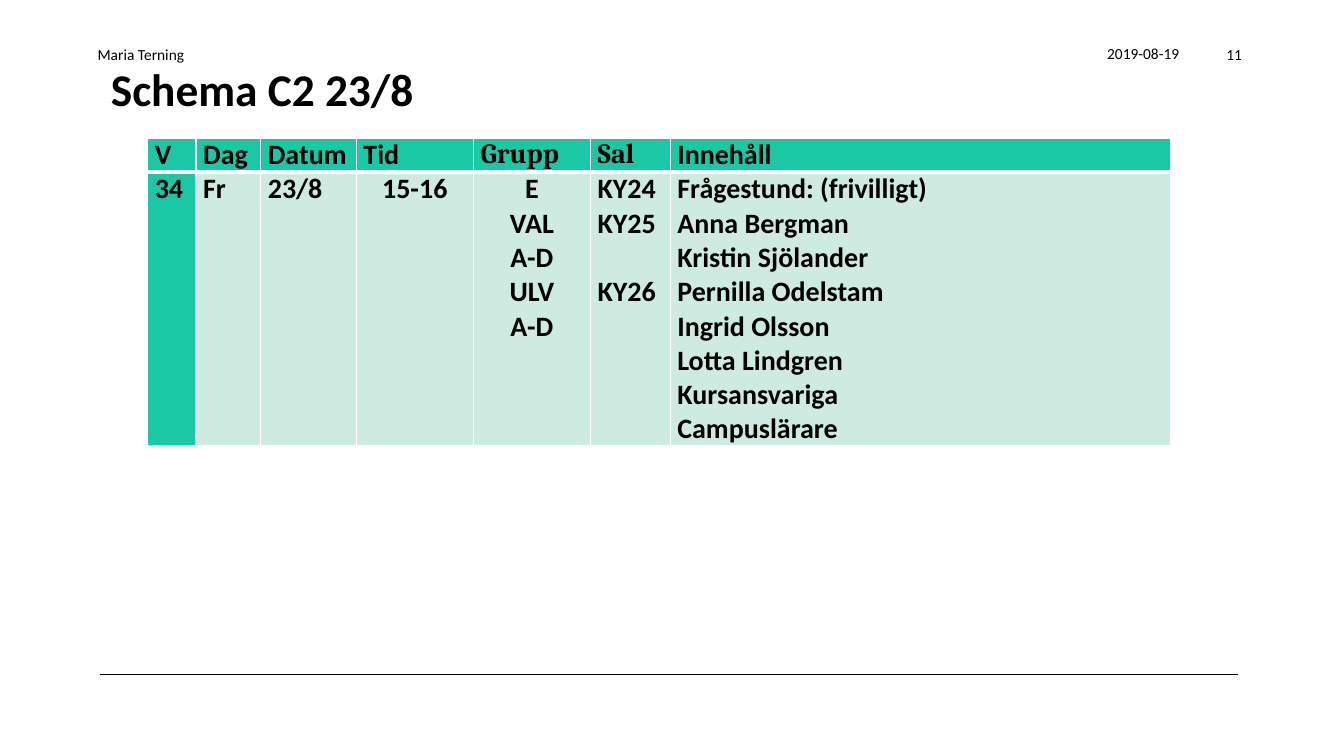
from dataclasses import dataclass
from typing import Any

from lxml import etree
from pptx import Presentation
from pptx.dml.color import RGBColor
from pptx.enum.shapes import MSO_CONNECTOR
from pptx.enum.text import MSO_ANCHOR, MSO_AUTO_SIZE, PP_ALIGN
from pptx.oxml.ns import qn
from pptx.util import Cm, Pt

LEFT, CENTER, RIGHT = PP_ALIGN.LEFT, PP_ALIGN.CENTER, PP_ALIGN.RIGHT
TOP, MIDDLE, BOTTOM = MSO_ANCHOR.TOP, MSO_ANCHOR.MIDDLE, MSO_ANCHOR.BOTTOM
STRAIGHT = MSO_CONNECTOR.STRAIGHT
NO_AUTOFIT = MSO_AUTO_SIZE.NONE
TITLE_ONLY_LAYOUT = 5


@dataclass(frozen=True)
class Theme:
    text: str = "000000"
    border: str = "FFFFFF"
    accent: str = "1BC8A6"
    pale: str = "CDEBE1"
    body_font: str = "Calibri"
    accent_font: str = "Cambria"
    title_size: float = 32.4
    table_size: float = 20
    small_size: float = 11
    table_line: float = 24.4
    thin: float = 1
    thick: float = 3
    rule: float = 0.75


@dataclass(frozen=True)
class Label:
    text: str
    left: float
    top: float
    width: float
    alignment: PP_ALIGN
    anchor: MSO_ANCHOR


@dataclass(frozen=True)
class Column:
    """gap_before is the index of an entry that has one empty line above it."""
    heading: str
    width: float
    entries: tuple[str, ...]
    alignment: PP_ALIGN = LEFT
    heading_font: str = "Calibri"
    fill: str = "CDEBE1"
    gap_before: int | None = None


THEME = Theme()
LABEL_HEIGHT = 0.74
ROW_HEIGHTS = (0.86, 6.9)
LABELS = (
    Label("2019-08-19", 24.66, 0.99, 5.31, RIGHT, TOP),
    Label("11", 29.49, 1, 2.06, RIGHT, TOP),
    Label("Maria Terning", 2.21, 0.99, 21.62, LEFT, BOTTOM),
)
COLUMNS = (
    Column("V", 1.22, ("34",), fill=THEME.accent),
    Column("Dag", 1.63, ("Fr",)),
    Column("Datum", 2.41, ("23/8",)),
    Column("Tid", 2.95, ("15-16",), CENTER),
    Column("Grupp", 2.95, ("E", "VAL", "A-D", "ULV", "A-D"), CENTER, THEME.accent_font),
    Column("Sal", 2.01, ("KY24", "KY25", "KY26"),
           heading_font=THEME.accent_font, gap_before=2),
    Column("Innehåll", 12.62, (
        "Frågestund: (frivilligt)", "Anna Bergman", "Kristin Sjölander",
        "Pernilla Odelstam", "Ingrid Olsson", "Lotta Lindgren",
        "Kursansvariga", "Campuslärare")),
)


def apply_format(target: Any, values: dict[str, Any]) -> None:
    for name, value in values.items():
        setattr(target, name, value)


def write_paragraph(paragraph: Any, text: str, size: float, bold: bool = False,
                    alignment: PP_ALIGN = LEFT, font: str = THEME.body_font) -> None:
    paragraph.alignment = alignment
    run = paragraph.add_run()
    run.text = text
    apply_format(run.font, {"name": font, "size": Pt(size), "bold": bold})
    run.font.color.rgb = RGBColor.from_string(THEME.text)


def add_title(slide: Any, text: str) -> None:
    title = slide.shapes.title
    apply_format(title, {"left": Cm(2.54), "top": Cm(1.37),
                         "width": Cm(28.65), "height": Cm(1.73)})
    apply_format(title.text_frame, {"vertical_anchor": MIDDLE, "word_wrap": True,
                                    "auto_size": NO_AUTOFIT})
    write_paragraph(title.text_frame.paragraphs[0], text, THEME.title_size, bold=True)


def add_label(slide: Any, label: Label) -> None:
    box = slide.shapes.add_textbox(Cm(label.left), Cm(label.top),
                                   Cm(label.width), Cm(LABEL_HEIGHT))
    apply_format(box.text_frame, {"word_wrap": True, "vertical_anchor": label.anchor})
    write_paragraph(box.text_frame.paragraphs[0], label.text, THEME.small_size,
                    alignment=label.alignment)


def add_rule(slide: Any) -> None:
    rule = slide.shapes.add_connector(STRAIGHT, Cm(2.52), Cm(17), Cm(31.2), Cm(17))
    rule.line.width = Pt(THEME.rule)
    rule.line.color.rgb = RGBColor.from_string(THEME.text)
    etree.SubElement(rule._element.spPr, qn("a:effectLst"))


def set_borders(cell: Any, top: float, bottom: float) -> None:
    properties = cell._tc.get_or_add_tcPr()
    widths = {"lnL": THEME.thin, "lnR": THEME.thin, "lnT": top, "lnB": bottom}
    for position, (side, width) in enumerate(widths.items()):
        line = etree.Element(qn(f"a:{side}"), w=str(Pt(width)))
        fill = etree.SubElement(line, qn("a:solidFill"))
        etree.SubElement(fill, qn("a:srgbClr"), val=THEME.border)
        properties.insert(position, line)


def format_cell(cell: Any, fill: str, top: float, bottom: float) -> None:
    apply_format(cell, {"margin_left": Cm(0.18), "margin_right": Cm(0.18),
                        "margin_top": 0, "margin_bottom": 0, "vertical_anchor": TOP})
    cell.fill.solid()
    cell.fill.fore_color.rgb = RGBColor.from_string(fill)
    set_borders(cell, top, bottom)


def fill_column(table: Any, index: int, column: Column) -> None:
    table.columns[index].width = Cm(column.width)
    heading, body = table.cell(0, index), table.cell(1, index)
    format_cell(heading, THEME.accent, THEME.thin, THEME.thick)
    format_cell(body, column.fill, THEME.thick, THEME.thin)
    write_paragraph(heading.text_frame.paragraphs[0], column.heading,
                    THEME.table_size, bold=True, font=column.heading_font)
    for number, entry in enumerate(column.entries):
        frame = body.text_frame
        paragraph = frame.add_paragraph() if number else frame.paragraphs[0]
        if number == column.gap_before:
            paragraph.space_before = Pt(THEME.table_line)
        write_paragraph(paragraph, entry, THEME.table_size, bold=True,
                        alignment=column.alignment)


def add_schedule(slide: Any) -> None:
    width = sum(column.width for column in COLUMNS)
    frame = slide.shapes.add_table(len(ROW_HEIGHTS), len(COLUMNS), Cm(3.72), Cm(3.48),
                                   Cm(width), Cm(sum(ROW_HEIGHTS)))
    table = frame.table
    table.horz_banding = False
    for row, height in zip(table.rows, ROW_HEIGHTS):
        row.height = Cm(height)
    for index, column in enumerate(COLUMNS):
        fill_column(table, index, column)


def main() -> None:
    presentation = Presentation()
    apply_format(presentation, {"slide_width": Cm(33.87), "slide_height": Cm(19.05)})
    slide = presentation.slides.add_slide(presentation.slide_layouts[TITLE_ONLY_LAYOUT])
    add_rule(slide)
    add_title(slide, "Schema C2 23/8")
    for label in LABELS:
        add_label(slide, label)
    add_schedule(slide)
    presentation.save("out.pptx")


if __name__ == "__main__":
    main()
